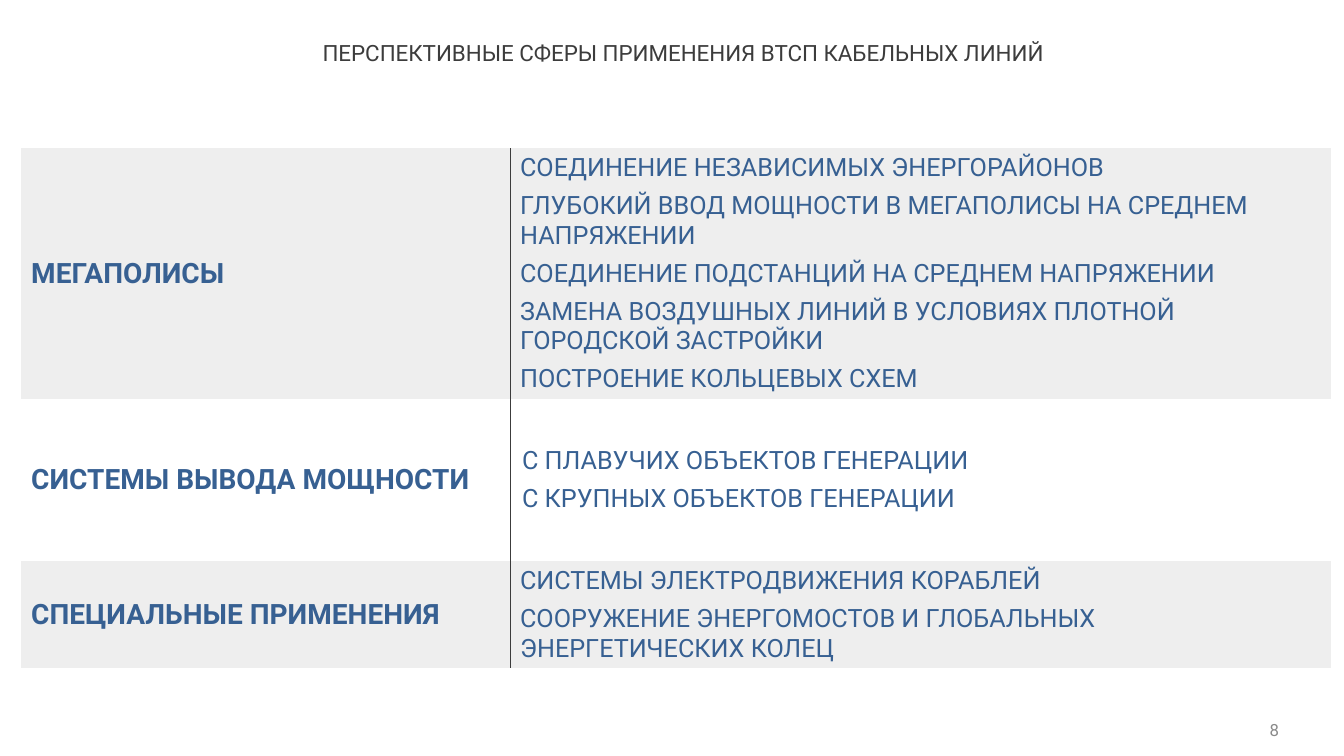
"""Build a slide with a table of application areas for HTS cable lines."""
from lxml.etree import SubElement
from pptx import Presentation
from pptx.dml.color import RGBColor
from pptx.enum.text import MSO_ANCHOR, PP_ALIGN
from pptx.oxml import parse_xml
from pptx.oxml.ns import nsdecls, qn
from pptx.util import Pt

COLORS = {"text": "3C3C3C", "blue": "376092", "band": "EEEEEE", "number": "8A8A8A"}
NO_STYLE = "{2D5ABB26-0587-4C30-8999-92F81FD0307C}"
AREAS = [
    ("МЕГАПОЛИСЫ", 158.4, 0, [
        "СОЕДИНЕНИЕ НЕЗАВИСИМЫХ ЭНЕРГОРАЙОНОВ",
        "ГЛУБОКИЙ ВВОД МОЩНОСТИ В МЕГАПОЛИСЫ НА СРЕДНЕМ НАПРЯЖЕНИИ",
        "СОЕДИНЕНИЕ ПОДСТАНЦИЙ НА СРЕДНЕМ НАПРЯЖЕНИИ",
        "ЗАМЕНА ВОЗДУШНЫХ ЛИНИЙ В УСЛОВИЯХ ПЛОТНОЙ ГОРОДСКОЙ ЗАСТРОЙКИ",
        "ПОСТРОЕНИЕ КОЛЬЦЕВЫХ СХЕМ"]),
    ("СИСТЕМЫ ВЫВОДА МОЩНОСТИ", 115.9, 1.44, [
        "С ПЛАВУЧИХ ОБЪЕКТОВ ГЕНЕРАЦИИ",
        "С КРУПНЫХ ОБЪЕКТОВ ГЕНЕРАЦИИ"]),
    ("СПЕЦИАЛЬНЫЕ ПРИМЕНЕНИЯ", 65.5, 0, [
        "СИСТЕМЫ ЭЛЕКТРОДВИЖЕНИЯ КОРАБЛЕЙ",
        "СООРУЖЕНИЕ ЭНЕРГОМОСТОВ И ГЛОБАЛЬНЫХ ЭНЕРГЕТИЧЕСКИХ КОЛЕЦ"]),
]


def add_run(p, text, size, color, bold=False):
    r = p.add_run()
    r.text = text
    r.font.name = "Roboto"
    r.font.size = Pt(size)
    r.font.bold = bold
    r.font.color.rgb = RGBColor.from_string(COLORS[color])


def set_frame(tf, anchor):
    tf.margin_left = tf.margin_right = tf.margin_top = tf.margin_bottom = 0
    tf.vertical_anchor = anchor
    tf.word_wrap = True


prs = Presentation()
prs.slide_width, prs.slide_height = Pt(960), Pt(540)
s = prs.slides.add_slide(prs.slide_layouts[5])

title = s.shapes.title
title.left, title.top, title.width, title.height = Pt(230.4), Pt(30.2), Pt(683.3), Pt(33.8)
set_frame(title.text_frame, MSO_ANCHOR.TOP)
p = title.text_frame.paragraphs[0]
p.alignment = PP_ALIGN.LEFT
p.line_spacing = 0.9
add_run(p, "ПЕРСПЕКТИВНЫЕ СФЕРЫ ПРИМЕНЕНИЯ ВТСП КАБЕЛЬНЫХ ЛИНИЙ", 16, "text")

frame = s.shapes.add_table(len(AREAS), 2, Pt(15.1), Pt(105.8), Pt(935.3), Pt(339.8))
table = frame.table
table.first_row = table.horz_banding = False
table._tbl.tblPr.find(qn("a:tableStyleId")).text = NO_STYLE
table.columns[0].width, table.columns[1].width = Pt(349.2), Pt(586.1)

for i, (area, height, indent, uses) in enumerate(AREAS):
    table.rows[i].height = Pt(height)
    for cell, side in zip(table.rows[i].cells, ("lnR", "lnL")):
        cell.vertical_anchor = MSO_ANCHOR.MIDDLE
        if i % 2 == 0:
            cell.fill.solid()
            cell.fill.fore_color.rgb = RGBColor.from_string(COLORS["band"])
        else:
            cell.fill.background()
        ln = parse_xml(f'<a:{side} {nsdecls("a")} w="{Pt(0.25)}"/>')
        fill = SubElement(ln, qn("a:solidFill"))
        SubElement(fill, qn("a:srgbClr"), val=COLORS["text"])
        cell._tc.get_or_add_tcPr().insert(0, ln)
    area_cell, uses_cell = table.rows[i].cells
    add_run(area_cell.text_frame.paragraphs[0], area, 20, "blue", True)
    tf = uses_cell.text_frame
    for j, use in enumerate(uses):
        p = tf.add_paragraph() if j else tf.paragraphs[0]
        p.space_after = Pt(6)
        p._p.get_or_add_pPr().set("marL", str(Pt(indent)))
        add_run(p, use, 18, "blue")

number = s.shapes.add_textbox(Pt(872.6), Pt(514.8), Pt(41), Pt(13))
set_frame(number.text_frame, MSO_ANCHOR.MIDDLE)
p = number.text_frame.paragraphs[0]
p.alignment = PP_ALIGN.RIGHT
add_run(p, "8", 12, "number")

prs.save("out.pptx")
